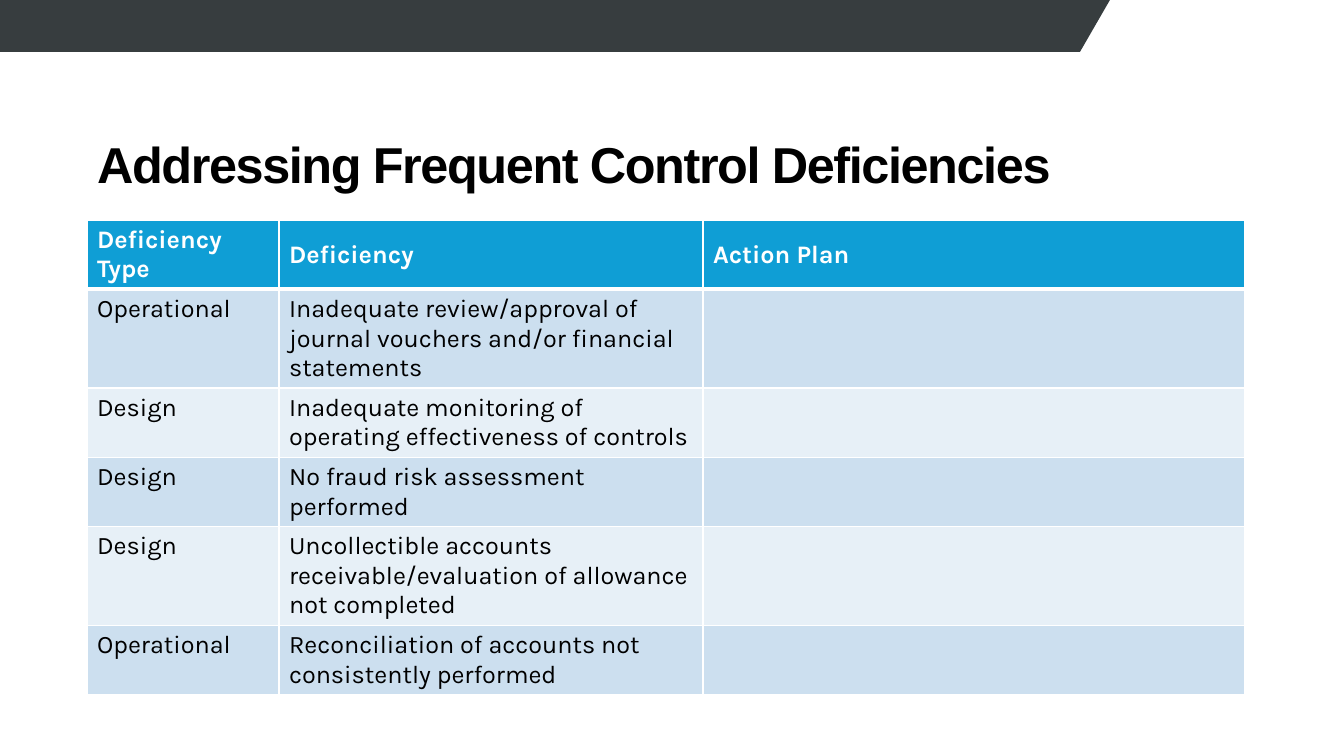
import pptx
import pptx.dml.color
import pptx.enum.text
import pptx.oxml
import pptx.oxml.ns
import pptx.util

PX = 914400 / 100.8
BLACK = pptx.dml.color.RGBColor(0x00, 0x00, 0x00)
WHITE = pptx.dml.color.RGBColor(0xFF, 0xFF, 0xFF)
CHARCOAL = pptx.dml.color.RGBColor(0x37, 0x3D, 0x3F)
HEADER_BLUE = pptx.dml.color.RGBColor(0x0F, 0x9E, 0xD5)
BAND_DARK = pptx.dml.color.RGBColor(0xCC, 0xDF, 0xEF)
BAND_LIGHT = pptx.dml.color.RGBColor(0xE7, 0xF0, 0xF7)


def px(length):
    return pptx.util.Emu(round(length * PX))


def add_run(paragraph, text, font_name, size, color, bold):
    run = paragraph.add_run()
    run.text = text
    run.font.name = font_name
    run.font.size = pptx.util.Pt(size)
    run.font.color.rgb = color
    run.font.bold = bold
    return run


presentation = pptx.Presentation()
presentation.slide_width = px(1344)
presentation.slide_height = px(756)
slide = presentation.slides.add_slide(presentation.slide_layouts[5])

# Slanted banner along the top edge
builder = slide.shapes.build_freeform(0, 0, scale=PX)
builder.add_line_segments([(1110, 0), (1080, 52), (0, 52)], close=True)
banner = builder.convert_to_shape()
banner.shadow.inherit = False
banner.fill.solid()
banner.fill.fore_color.rgb = CHARCOAL
banner.line.fill.background()

# Title
title = slide.shapes.title
title.left, title.top, title.width, title.height = px(87), px(75), px(987), px(124)
title.text_frame.word_wrap = True
title.text_frame.auto_size = pptx.enum.text.MSO_AUTO_SIZE.NONE
title.text_frame.vertical_anchor = pptx.enum.text.MSO_ANCHOR.BOTTOM
title_paragraph = title.text_frame.paragraphs[0]
title_paragraph.alignment = pptx.enum.text.PP_ALIGN.LEFT
title_paragraph.line_spacing = 0.9
title_run = add_run(title_paragraph, "Addressing Frequent Control Deficiencies",
                    "Arial", 36, BLACK, True)
title_run.font._element.set("spc", "-100")

# Deficiency table, with the action plans left open
rows = [
    ("Deficiency Type", "Deficiency", "Action Plan"),
    ("Operational", "Inadequate review/approval of journal vouchers "
                    "and/or financial statements", ""),
    ("Design", "Inadequate monitoring of operating effectiveness of controls", ""),
    ("Design", "No fraud risk assessment performed", ""),
    ("Design", "Uncollectible accounts receivable/evaluation of allowance "
               "not completed", ""),
    ("Operational", "Reconciliation of accounts not consistently performed", ""),
]
column_widths = [192, 424, 542]
row_height = 41
table = slide.shapes.add_table(
    len(rows), len(column_widths), px(87), px(220),
    px(sum(column_widths)), px(row_height * len(rows))).table
for column, width in zip(table.columns, column_widths):
    column.width = px(width)

for row_index, texts in enumerate(rows):
    is_header = row_index == 0
    table.rows[row_index].height = px(row_height)
    for column_index, text in enumerate(texts):
        cell = table.cell(row_index, column_index)

        # White rules, heavier beneath the header
        properties = cell._tc.get_or_add_tcPr()
        for side in ("L", "R", "T", "B"):
            heavy = (side == "B" and is_header) or (side == "T" and row_index == 1)
            weight = pptx.util.Pt(3 if heavy else 1)
            properties.append(pptx.oxml.parse_xml(
                f'<a:ln{side} {pptx.oxml.ns.nsdecls("a")} w="{weight}"><a:solidFill>'
                f'<a:srgbClr val="{WHITE}"/></a:solidFill></a:ln{side}>'))

        cell.fill.solid()
        if is_header:
            cell.fill.fore_color.rgb = HEADER_BLUE
        else:
            cell.fill.fore_color.rgb = BAND_DARK if row_index % 2 else BAND_LIGHT
        if is_header and column_index > 0:
            cell.vertical_anchor = pptx.enum.text.MSO_ANCHOR.MIDDLE
        if text:
            add_run(cell.text_frame.paragraphs[0], text, "Karla", 18,
                    WHITE if is_header else BLACK, is_header)

presentation.save("out.pptx")
